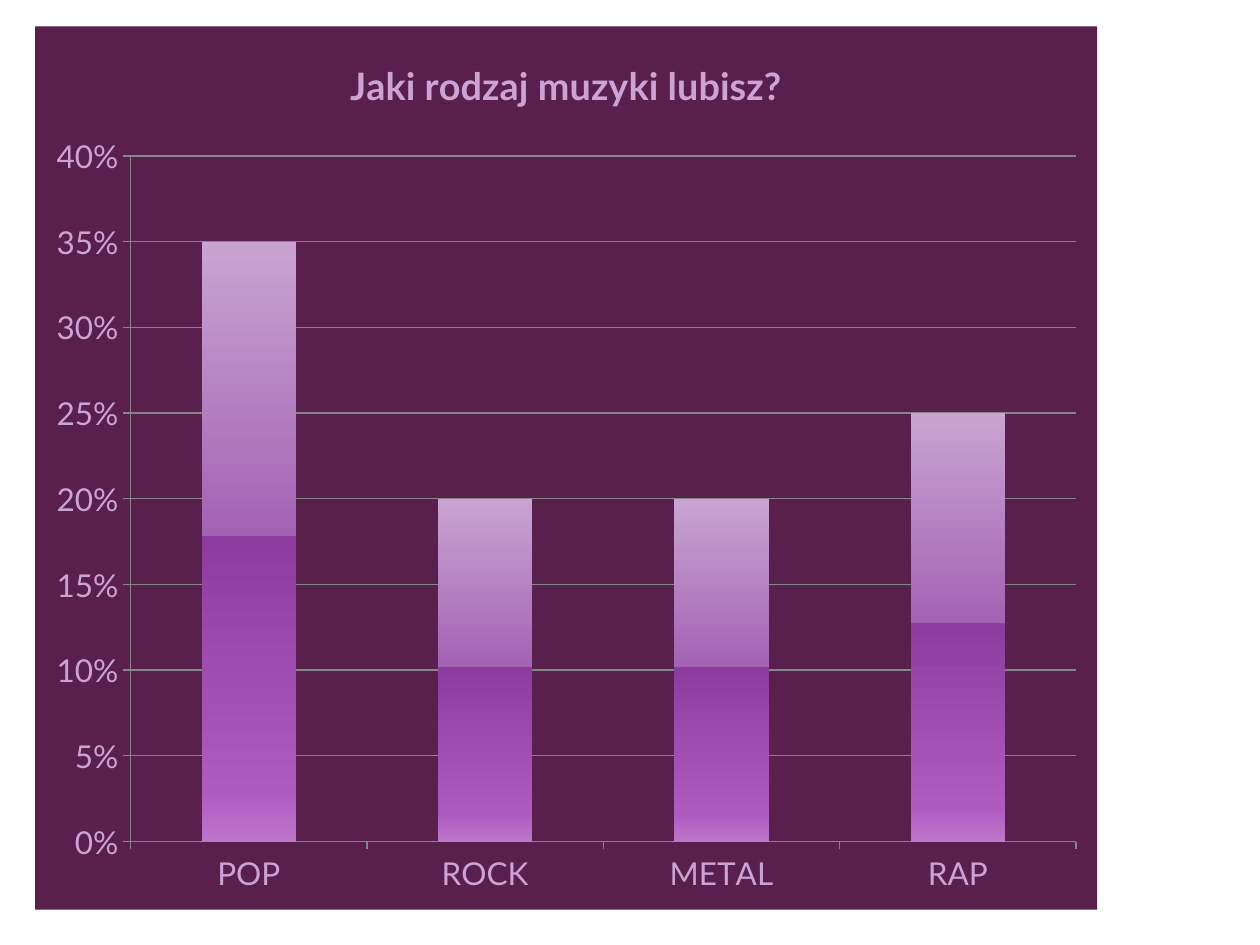
from typing import NamedTuple

from lxml.etree import SubElement
from pptx import Presentation
from pptx.chart.data import CategoryChartData
from pptx.dml.color import RGBColor
from pptx.enum.chart import XL_CHART_TYPE as ChartType, XL_TICK_MARK as TickMark
from pptx.oxml.ns import qn
from pptx.util import Cm, Pt

PLUM = RGBColor(0x59, 0x1F, 0x4D)
LILAC = RGBColor(0xCD, 0xA3, 0xD6)
GREY = RGBColor(0x86, 0x86, 0x86)
FONT = "Lato"


class Stop(NamedTuple):
    percent: int
    color: RGBColor


class Answer(NamedTuple):
    genre: str
    share: float


BAR_STOPS = [
    Stop(0, RGBColor(0xC9, 0xA4, 0xD2)),
    Stop(49, RGBColor(0xA4, 0x62, 0xB4)),
    Stop(49, RGBColor(0x8C, 0x3C, 0x9E)),
    Stop(92, RGBColor(0xAE, 0x5B, 0xC0)),
    Stop(100, RGBColor(0xBC, 0x76, 0xCA)),
]
ANSWERS = [
    Answer("POP", 0.35),
    Answer("ROCK", 0.2),
    Answer("METAL", 0.2),
    Answer("RAP", 0.25),
]


def style_font(font, size: float, bold: bool = False) -> None:
    font.name = FONT
    font.size = Pt(size)
    font.bold = bold
    font.color.rgb = LILAC


def style_line(line) -> None:
    line.color.rgb = GREY
    line.width = Pt(0.75)


def style_axis(axis) -> None:
    axis.major_tick_mark = TickMark.OUTSIDE
    axis.minor_tick_mark = TickMark.NONE
    style_line(axis.format.line)
    style_font(axis.tick_labels.font, 18)


def fill_gradient(sp_pr, stops: list[Stop]) -> None:
    grad = SubElement(sp_pr, qn("a:gradFill"), rotWithShape="1")
    gs_list = SubElement(grad, qn("a:gsLst"))
    for stop in stops:
        gs = SubElement(gs_list, qn("a:gs"), pos=str(stop.percent * 1000))
        SubElement(gs, qn("a:srgbClr"), val=str(stop.color))
    SubElement(grad, qn("a:lin"), ang="5400000", scaled="0")


def fill_chart_area(chart_space, color: RGBColor) -> None:
    sp_pr = chart_space.makeelement(qn("c:spPr"))
    fill = SubElement(sp_pr, qn("a:solidFill"))
    SubElement(fill, qn("a:srgbClr"), val=str(color))
    SubElement(SubElement(sp_pr, qn("a:ln")), qn("a:noFill"))
    chart_space.find(qn("c:chart")).addnext(sp_pr)


def add_survey_chart(s, question: str, answers: list[Answer]) -> None:
    data = CategoryChartData(number_format="0%")
    data.categories = [a.genre for a in answers]
    data.add_series("Series 1", [a.share for a in answers])
    frame = s.shapes.add_chart(
        ChartType.COLUMN_CLUSTERED, Cm(0.71), Cm(0.53), Cm(21.41), Cm(17.81), data
    )
    chart = frame.chart
    style_font(chart.font, 18)
    chart.has_legend = False
    chart.has_title = True
    chart.chart_title.include_in_layout = False
    p = chart.chart_title.text_frame.paragraphs[0]
    r = p.add_run()
    r.text = question
    style_font(r.font, 21.6, bold=True)

    style_axis(chart.category_axis)
    values = chart.value_axis
    style_axis(values)
    values.minimum_scale, values.maximum_scale, values.major_unit = 0, 0.4, 0.05
    values.tick_labels.number_format = "0%"
    values.tick_labels.number_format_is_linked = False
    values.has_major_gridlines = True
    style_line(values.major_gridlines.format.line)

    plot = chart.plots[0]
    plot.gap_width = 150
    plot.vary_by_categories = False
    bars = plot.series[0]
    bars.invert_if_negative = False
    fill_gradient(bars._element.get_or_add_spPr(), BAR_STOPS)
    fill_chart_area(chart._chartSpace, PLUM)


def main() -> None:
    prs = Presentation()
    prs.slide_width, prs.slide_height = Cm(25.4), Cm(19.05)
    s = prs.slides.add_slide(prs.slide_layouts[6])
    add_survey_chart(s, "Jaki rodzaj muzyki lubisz?", ANSWERS)
    prs.save("out.pptx")


if __name__ == "__main__":
    main()
